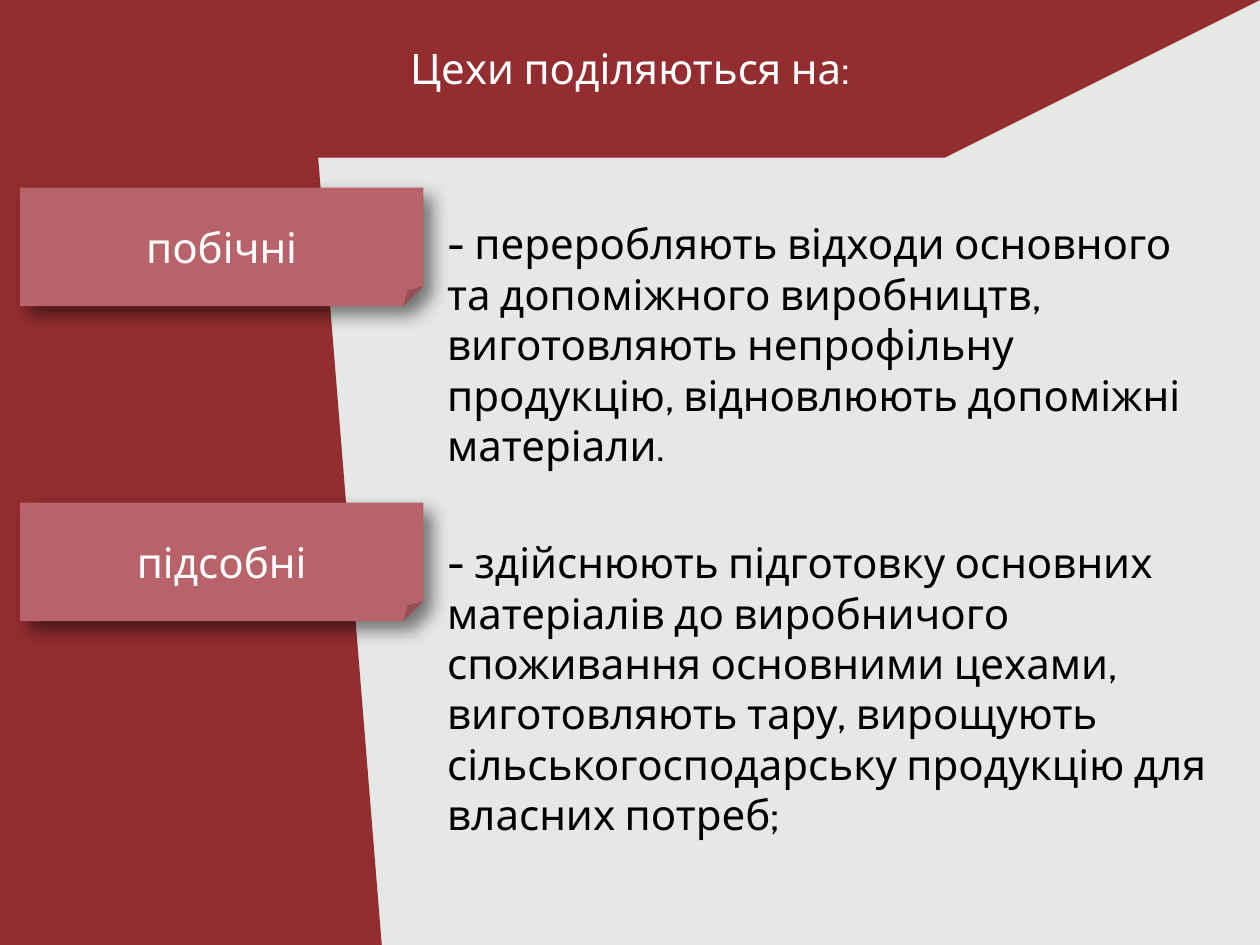
from pptx import Presentation
from pptx.dml.color import RGBColor
from pptx.enum.shapes import MSO_SHAPE as SHAPE
from pptx.enum.text import MSO_ANCHOR as ANCHOR, PP_ALIGN as ALIGN
from pptx.oxml import parse_xml
from pptx.oxml.ns import nsdecls
from pptx.util import Inches, Pt

WIDTH, HEIGHT = 10, 7.5
HEADER_H = HEIGHT / 6
RED, ROSE, PAPER, WHITE, BLACK = "932D30", "B76369", "E6E8E5", "FFFFFF", "000000"
ROW_TOP, ROW_STEP = 1.49, 2.5
SHOPS = [
    ("побічні", "- переробляють відходи основного та допоміжного виробництв, "
     "виготовляють непрофільну продукцію, відновлюють допоміжні матеріали.", 0.19, 1.78),
    ("підсобні", "- здійснюють підготовку основних матеріалів до виробничого "
     "споживання основними цехами, виготовляють тару, вирощують "
     "сільськогосподарську продукцію для власних потреб;", 0.22, 2.54),
]


def paint(fill, color):
    fill.solid()
    fill.fore_color.rgb = RGBColor.from_string(color)


def add_block(s, kind, box, color, rotation=0):
    sp = s.shapes.add_shape(kind, *map(Inches, box))
    sp.shadow.inherit = False
    paint(sp.fill, color)
    sp.line.fill.background()
    sp.rotation = rotation
    return sp


def set_slant(sp, share):
    """Set the inset of a trapezoid's short side, as a share of its height."""
    guides = sp._element.spPr.find("{*}prstGeom/{*}avLst")
    for guide in list(guides):
        guides.remove(guide)
    guides.append(parse_xml(
        f'<a:gd {nsdecls("a")} name="adj" fmla="val {share * 100000}"/>'))


def write(sp, text, color, align=ALIGN.LEFT, anchor=ANCHOR.TOP, spacing=None, right=0.1):
    tf = sp.text_frame
    frame = {"word_wrap": True, "vertical_anchor": anchor, "margin_right": Inches(right)}
    for name, value in frame.items():
        setattr(tf, name, value)
    p = tf.paragraphs[0]
    p.alignment = align
    if spacing:
        p.line_spacing = spacing
    r = p.add_run()
    r.text = text
    for name, value in {"name": "Cabin", "size": Pt(24), "bold": False}.items():
        setattr(r.font, name, value)
    r.font.color.rgb = RGBColor.from_string(color)


def add_soft_shadow(sp):
    """Fill the empty effect list with a blurred shadow to the lower right."""
    effects = sp._element.spPr.find("{*}effectLst")
    effects.append(parse_xml(
        f'<a:outerShdw {nsdecls("a")} blurRad="{Pt(10)}" dist="{Pt(7.1)}" '
        f'dir="{45 * 60000}" algn="tl" rotWithShape="0">'
        f'<a:srgbClr val="{BLACK}"><a:alpha val="50000"/></a:srgbClr></a:outerShdw>'))


def add_header(s, box, text):
    band = add_block(s, SHAPE.TRAPEZOID, box, RED, rotation=180)
    set_slant(band, 2)
    title = s.shapes.title
    title.left, title.top, title.width, title.height = map(Inches, box)
    write(title, text, WHITE, ALIGN.CENTER, ANCHOR.MIDDLE, Pt(15.9))


def add_side_panel(s, box):
    """Fill the upright box with a quarter-turned shape, so its slant is on the right."""
    x, y, w, h = box
    turned = (x + (w - h) / 2, y + (h - w) / 2, h, w)
    add_block(s, SHAPE.FLOWCHART_MANUAL_INPUT, turned, RED, rotation=90)


def add_shop(s, box, name, text, text_drop, text_h):
    x, y, w, h = box
    label = (x, y, 3.2, 0.94)
    add_soft_shadow(add_block(s, SHAPE.FOLDED_CORNER, label, ROSE))
    write(s.shapes.add_textbox(*map(Inches, label)), name, WHITE,
          ALIGN.CENTER, ANCHOR.MIDDLE)
    left = x + 3.29
    body = (left, y + text_drop, x + w - left, text_h)
    write(s.shapes.add_textbox(*map(Inches, body)), text, BLACK, right=0.4)


def main():
    prs = Presentation()
    prs.slide_width, prs.slide_height = Inches(WIDTH), Inches(HEIGHT)
    s = prs.slides.add_slide(prs.slide_layouts[5])
    paint(s.background.fill, PAPER)
    add_header(s, (0, 0, WIDTH, HEADER_H), "Цехи поділяються на:")
    add_side_panel(s, (0, 0, 3.03, HEIGHT))
    s.shapes._spTree.append(s.shapes.title._element)
    for i, shop in enumerate(SHOPS):
        add_shop(s, (0.16, ROW_TOP + i * ROW_STEP, WIDTH - 0.16, ROW_STEP), *shop)
    prs.save("out.pptx")


if __name__ == "__main__":
    main()
